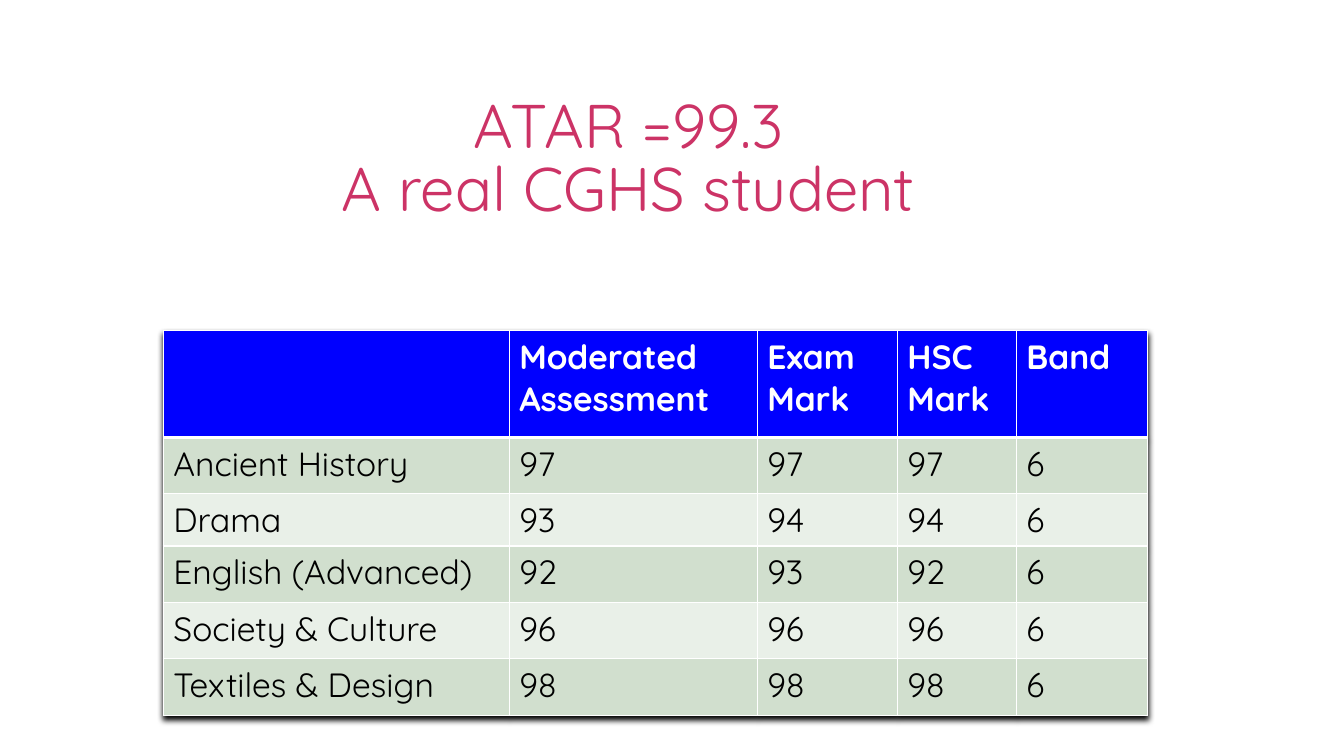
from dataclasses import dataclass
from pptx import Presentation, util as u
from pptx.dml.color import RGBColor
from pptx.enum import text
from pptx.oxml import parse_xml
from pptx.oxml.ns import nsdecls


@dataclass(frozen=True)
class Theme:
    """Colours, font and type sizes of the deck."""
    font: str = "Quicksand"
    title: str = "CC3366"
    header: str = "0000FF"
    white: str = "FFFFFF"
    ink: str = "000000"
    bands: tuple = ("D1DFCE", "E9F0E8")
    title_size: int = 44
    table_size: int = 24


class ResultsSlide:
    """Draws styled elements on the current slide."""

    def __init__(self, prs, theme):
        """Add a title-only slide to the presentation."""
        self.s = prs.slides.add_slide(prs.slide_layouts[5])
        self.theme = theme

    def style(self, p, color, **values):
        """Format every run of a paragraph."""
        for r in p.runs:
            for name, value in {"name": self.theme.font, **values}.items():
                setattr(r.font, name, value)
            r.font.color.rgb = RGBColor.from_string(color)

    def title(self, wording, box):
        """Place and format the title placeholder."""
        sp = self.s.shapes.title
        sp.left, sp.top, sp.width, sp.height = map(u.Inches, box)
        tf = sp.text_frame
        frame = {"word_wrap": True, "auto_size": text.MSO_AUTO_SIZE.NONE,
                 "vertical_anchor": text.MSO_ANCHOR.BOTTOM,
                 "margin_left": u.Inches(0.13), "margin_right": u.Inches(0.13),
                 "margin_top": u.Inches(0.07), "margin_bottom": u.Inches(0.07)}
        for name, value in frame.items():
            setattr(tf, name, value)
        p = tf.paragraphs[0]
        p.text = wording
        p.alignment, p.line_spacing = text.PP_ALIGN.CENTER, 0.85
        self.style(p, self.theme.title, size=u.Pt(self.theme.title_size))

    def border(self, cell, row):
        """Outline a cell in white, heavier below the header."""
        for side in "LRTB":
            width = 3 if (row, side) in ((0, "B"), (1, "T")) else 1
            cell._tc.get_or_add_tcPr().append(parse_xml(
                f'<a:ln{side} {nsdecls("a")} w="{u.Pt(width)}"><a:solidFill>'
                f'<a:srgbClr val="{self.theme.white}"/></a:solidFill></a:ln{side}>'))

    def shadow(self, table):
        """Give the table a soft shadow below."""
        table._tbl.tblPr.insert(0, parse_xml(
            f'<a:effectLst {nsdecls("a")}><a:outerShdw blurRad="50800" dist="38100" '
            f'dir="5400000" algn="t" rotWithShape="0"><a:srgbClr val="{self.theme.ink}"/>'
            '</a:outerShdw></a:effectLst>'))

    def table(self, rows, left, top, widths, heights):
        """Add a table with a coloured header and banded rows."""
        size = u.Inches(sum(widths)), u.Inches(sum(heights))
        table = self.s.shapes.add_table(len(rows), len(widths), u.Inches(left),
                                        u.Inches(top), *size).table
        for column, width in zip(table.columns, widths):
            column.width = u.Inches(width)
        for i, (row, height) in enumerate(zip(rows, heights)):
            table.rows[i].height = u.Inches(height)
            fill = self.theme.bands[(i - 1) % 2] if i else self.theme.header
            for j, value in enumerate(row):
                cell = table.cell(i, j)
                cell.text = value
                self.style(cell.text_frame.paragraphs[0],
                           self.theme.ink if i else self.theme.white,
                           size=u.Pt(self.theme.table_size), bold=i == 0)
                self.border(cell, i)
                cell.fill.solid()
                cell.fill.fore_color.rgb = RGBColor.from_string(fill)
        self.shadow(table)


def main():
    """Build and save the results slide."""
    prs = Presentation()
    prs.slide_width, prs.slide_height = u.Inches(13.33), u.Inches(7.5)
    slide = ResultsSlide(prs, Theme())
    slide.title("ATAR =99.3\vA real CGHS student", (0.68, 0.76, 11.11, 1.53))
    results = [
        ("", "Moderated Assessment", "Exam Mark", "HSC Mark", "Band"),
        ("Ancient History", "97", "97", "97", "6"),
        ("Drama", "93", "94", "94", "6"),
        ("English (Advanced)", "92", "93", "92", "6"),
        ("Society & Culture", "96", "96", "96", "6"),
        ("Textiles & Design", "98", "98", "98", "6"),
    ]
    slide.table(results, 1.62, 3.28, (3.43, 2.46, 1.39, 1.18, 1.3),
                (1.06, 0.56, 0.31, 0.56, 0.56, 0.56))
    prs.save("out.pptx")


if __name__ == "__main__":
    main()
